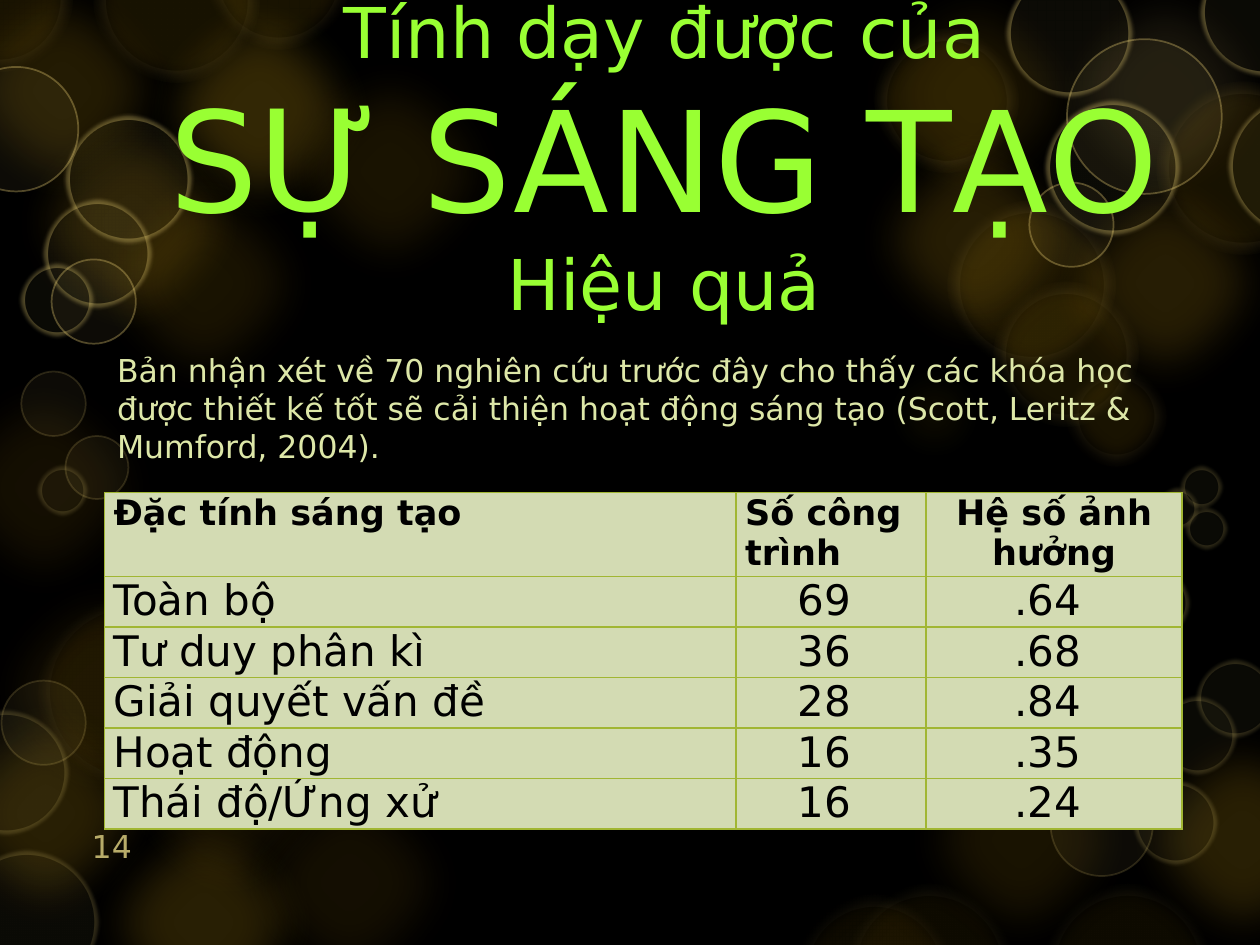
from dataclasses import dataclass

from lxml import etree
from pptx import Presentation
from pptx.dml.color import RGBColor
from pptx.enum.shapes import MSO_SHAPE
from pptx.enum.text import MSO_ANCHOR, PP_ALIGN
from pptx.oxml.ns import qn
from pptx.util import Cm, Pt

ELLIPSE = MSO_SHAPE.OVAL
LEFT, CENTER = PP_ALIGN.LEFT, PP_ALIGN.CENTER
TOP, MIDDLE, BOTTOM = MSO_ANCHOR.TOP, MSO_ANCHOR.MIDDLE, MSO_ANCHOR.BOTTOM

WIDTH, HEIGHT = 25.4, 19.05


@dataclass(frozen=True)
class Theme:
    font: str = "DejaVu Sans"
    background: str = "000000"
    amber: str = "FDC61B"
    yellow: str = "FFE281"
    cream: str = "FEEBAE"
    title: str = "99FF33"
    body: str = "DDE7A8"
    page_number: str = "B8AC69"
    cell_text: str = "000000"
    cell_fill: str = "D3DBB3"
    border: str = "A1B633"
    title_size: int = 40
    title_big_size: int = 80
    body_size: int = 18
    header_size: int = 20
    cell_size: int = 24


THEME = Theme()


@dataclass(frozen=True)
class CircleStyle:
    """Opacities in percent, line width in points, soft edge in centimetres."""
    fill: str
    line: str = ""
    width: int = 0
    line_opacity: int = 0
    soft_edge: float = 0


GLOW = CircleStyle(THEME.amber, soft_edge=0.88)
PALE_GLOW = CircleStyle(THEME.yellow, soft_edge=0.88)
HALO = CircleStyle(THEME.amber, THEME.cream, 14, 6, 0.35)
FAINT_HALO = CircleStyle(THEME.amber, THEME.cream, 14, 4, 0.35)
DIM_RING = CircleStyle(THEME.yellow, THEME.yellow, 1, 15)
RING = CircleStyle(THEME.yellow, THEME.yellow, 1, 30)
DIM_BLUR = CircleStyle(THEME.yellow, THEME.yellow, 5, 15, 0.09)
BLUR = CircleStyle(THEME.yellow, THEME.yellow, 5, 30, 0.09)

# Large glows share one diameter: left, top, opacity.
GLOW_DIAMETER = 5.31
LARGE_GLOWS = [
    (-0.65, 11.23, 8), (1.45, 3.05, 10), (5.21, 0.79, 10), (1.45, 15.93, 16),
    (-1.41, -0.83, 14), (2.57, -0.46, 20), (0, 1.83, 15), (16.99, -0.75, 10),
    (20.83, 3.05, 15), (22.38, 14.27, 16), (18.52, 12.12, 5),
    (-1.74, 13.74, 16), (1.96, 13.31, 8), (16.99, 2.18, 15),
    (17.93, 14.27, 10), (4.39, 15.14, 8), (-1.77, 7.16, 8)]

# Style, fill opacity, then left, top, diameter of each circle.
CIRCLE_GROUPS = [
    (PALE_GLOW, 10, [(20.83, -0.83, GLOW_DIAMETER)]),
    (GLOW, 10, [(17.15, 6.65, 3.38)]),
    (HALO, 10, [
        (23.32, 1.65, 3.48), (17.63, 0.58, 2.9), (19.1, 4.04, 3.38),
        (20.04, 5.69, 2.9), (21.51, 7.39, 2.01), (1.9, -1.66, 3.33),
        (4.17, -1.9, 2.9), (-1.45, -1.47, 2.9)]),
    (FAINT_HALO, 6, [
        (0.76, 12.01, 3.89), (16.03, 18.03, 3.2), (17.02, 17.81, 3.43),
        (21.03, 17.81, 3.4)]),
    (DIM_RING, 5, [
        (0.03, 13.72, 1.7), (21.18, 15.6, 2.06), (20.83, 13.69, 2.06),
        (0.43, 7.49, 1.3), (1.32, 8.79, 1.27)]),
    (RING, 5, [
        (-0.93, 1.35, 2.51), (1.04, 5.23, 1.7), (21.51, 0.79, 3.12),
        (20.75, 3.68, 1.7)]),
    (DIM_BLUR, 5, [
        (-0.9, 17.15, 2.87), (-1.12, 14.33, 2.49), (19.38, 14.55, 2.06),
        (22.86, 15.75, 1.68), (22.43, 11.38, 1.55), (23.37, 14.05, 1.55),
        (24.13, 13.31, 1.55), (23.8, 9.4, 0.84), (23.32, 9.83, 0.84),
        (23.9, 10.24, 0.84), (0.76, 9.4, 0.99)]),
    (BLUR, 5, [
        (1.32, 2.34, 2.54), (0.89, 4.04, 2.16), (0.43, 5.33, 1.45),
        (20.29, -0.6, 2.54), (24.21, -1.02, 2.54), (24.77, 1.93, 2.84),
        (21.08, 2.03, 2.69)]),
]

TITLE = [("Tính dạy được của", THEME.title_size),
         ("SỰ SÁNG TẠO", THEME.title_big_size),
         ("Hiệu quả", THEME.title_size)]
BODY = ("Bản nhận xét về 70 nghiên cứu trước đây cho thấy các khóa học được "
        "thiết kế tốt sẽ cải thiện hoạt động sáng tạo "
        "(Scott, Leritz & Mumford, 2004).")
EFFECT_ROWS = [
    ("Đặc tính sáng tạo", "Số công trình", "Hệ số ảnh hưởng"),
    ("Toàn bộ", "69 ", ".64 "),
    ("Tư duy phân kì", "36 ", ".68 "),
    ("Giải quyết vấn đề", "28 ", ".84 "),
    ("Hoạt động", "16 ", ".35 "),
    ("Thái độ/Ứng xử", "16 ", ".24 "),
]
COLUMN_WIDTHS = [12.73, 3.83, 5.16]
HEADER_HEIGHT, ROW_HEIGHT = 1.63, 0.99


class SlideBuilder:
    def __init__(self, slide, theme):
        self.slide, self.theme = slide, theme
        self.paint(slide.background.fill, theme.background)

    def paint(self, fill, color):
        fill.solid()
        fill.fore_color.rgb = RGBColor.from_string(color)

    def set_font(self, font, size, color, bold=False):
        font.name, font.size, font.bold = self.theme.font, Pt(size), bold
        font.color.rgb = RGBColor.from_string(color)

    def circle(self, left, top, diameter, style, opacity):
        shape = self.slide.shapes.add_shape(
            ELLIPSE, Cm(left), Cm(top), Cm(diameter), Cm(diameter))
        shape.shadow.inherit = False
        opacities = [opacity]
        self.paint(shape.fill, style.fill)
        if style.line:
            self.paint(shape.line.fill, style.line)
            shape.line.width = Pt(style.width)
            opacities.append(style.line_opacity)
        else:
            shape.line.fill.background()
        properties = shape.element.spPr
        for color, percent in zip(properties.iter(qn("a:srgbClr")), opacities):
            etree.SubElement(color, qn("a:alpha"), val=str(percent * 1000))
        if style.soft_edge:
            etree.SubElement(properties.find(qn("a:effectLst")), qn("a:softEdge"),
                             rad=str(Cm(style.soft_edge)))

    def text(self, box, lines, color, align=LEFT, anchor=TOP):
        """Add one paragraph from (text, size) lines split by line breaks."""
        frame = self.slide.shapes.add_textbox(*map(Cm, box)).text_frame
        frame.word_wrap, frame.vertical_anchor = True, anchor
        paragraph = frame.paragraphs[0]
        paragraph.alignment = align
        self.set_font(paragraph.font, lines[0][1], color)
        for index, (words, size) in enumerate(lines):
            if index:
                paragraph.add_line_break()
            run = paragraph.add_run()
            run.text = words
            if size != lines[0][1]:
                run.font.size = Pt(size)

    def cell_borders(self, cell):
        properties = cell._tc.get_or_add_tcPr()
        for index, side in enumerate(("a:lnL", "a:lnR", "a:lnT", "a:lnB")):
            line = etree.Element(qn(side), w=str(Pt(1)))
            fill = etree.SubElement(line, qn("a:solidFill"))
            etree.SubElement(fill, qn("a:srgbClr"), val=self.theme.border)
            properties.insert(index, line)

    def table(self, left, top, rows, widths, heights):
        table = self.slide.shapes.add_table(
            len(rows), len(widths), Cm(left), Cm(top),
            Cm(sum(widths)), Cm(sum(heights))).table
        for column, width in zip(table.columns, widths):
            column.width = Cm(width)
        for row, height in zip(table.rows, heights):
            row.height = Cm(height)
        for r, values in enumerate(rows):
            for c, value in enumerate(values):
                cell = table.cell(r, c)
                cell.margin_left = cell.margin_right = Cm(0.18)
                cell.margin_top = cell.margin_bottom = 0
                cell.text = value
                paragraph = cell.text_frame.paragraphs[0]
                paragraph.alignment = CENTER if c == 2 or (c and r) else LEFT
                size = self.theme.cell_size if r else self.theme.header_size
                self.set_font(paragraph.font, size, self.theme.cell_text, bold=r == 0)
                self.paint(cell.fill, self.theme.cell_fill)
                self.cell_borders(cell)


def main():
    presentation = Presentation()
    presentation.slide_width, presentation.slide_height = Cm(WIDTH), Cm(HEIGHT)
    slide = presentation.slides.add_slide(presentation.slide_layouts[6])
    builder = SlideBuilder(slide, THEME)
    for left, top, opacity in LARGE_GLOWS:
        builder.circle(left, top, GLOW_DIAMETER, GLOW, opacity)
    for style, opacity, circles in CIRCLE_GROUPS:
        for circle in circles:
            builder.circle(*circle, style, opacity)
    builder.text((1.6, 16.54, 1.7, 1.02), [("14", THEME.body_size)],
                 THEME.page_number, anchor=BOTTOM)
    heights = [HEADER_HEIGHT] + [ROW_HEIGHT] * (len(EFFECT_ROWS) - 1)
    builder.table(2.11, 9.93, EFFECT_ROWS, COLUMN_WIDTHS, heights)
    builder.text((2.11, 6.96, 21.01, 2.57), [(BODY, THEME.body_size)], THEME.body)
    builder.text((2.79, 1.88, 21.21, 2.57), TITLE, THEME.title, CENTER, MIDDLE)
    presentation.save("out.pptx")


if __name__ == "__main__":
    main()
